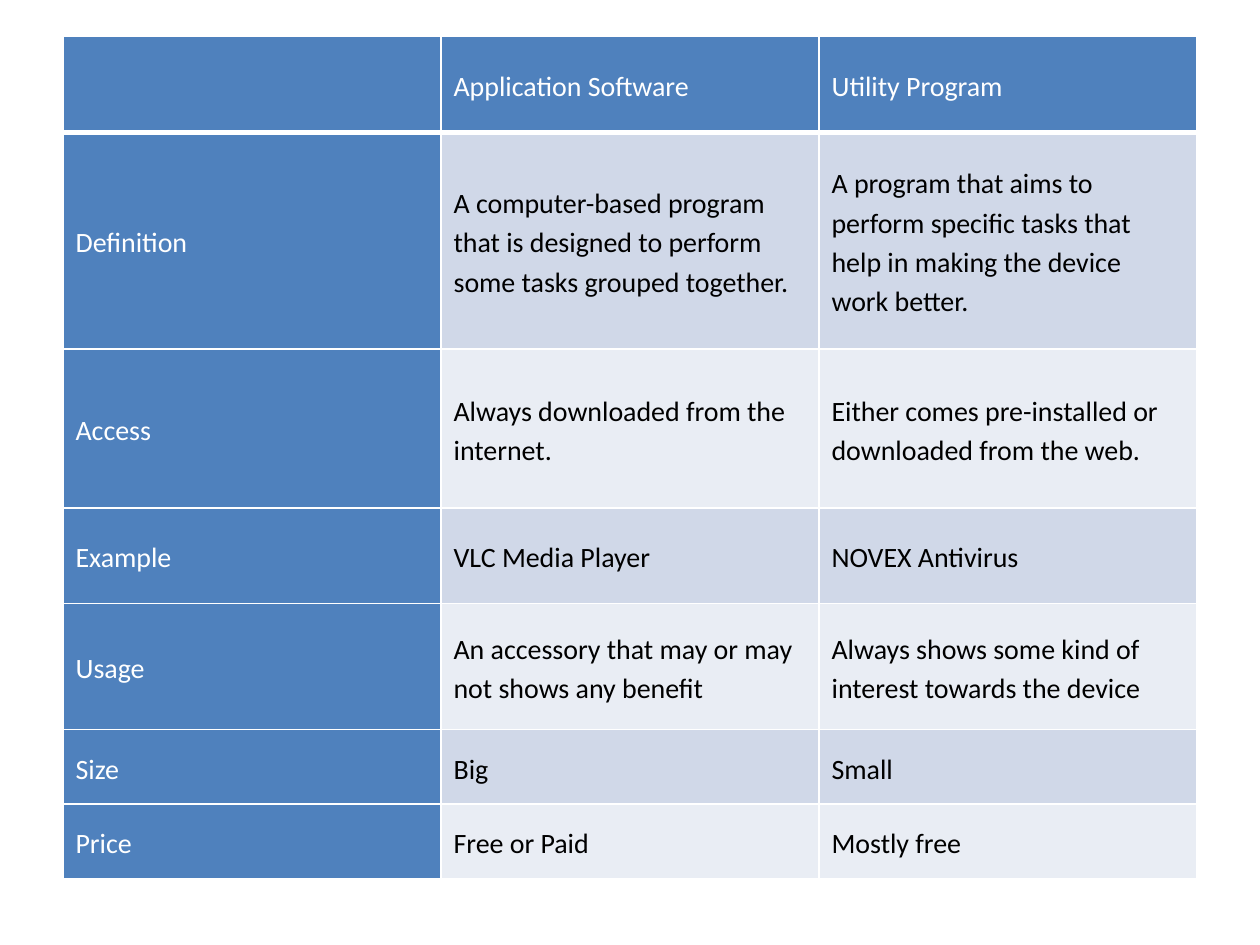
from lxml import etree
from pptx import Presentation
from pptx.dml.color import RGBColor
from pptx.enum.text import MSO_ANCHOR
from pptx.oxml.ns import qn
from pptx.util import Cm, Pt

MIDDLE = MSO_ANCHOR.MIDDLE

ROWS = [
    (1.93, "", "Application Software", "Utility Program"),
    (4.37, "Definition",
     "A computer-based program that is designed to perform some tasks grouped together.",
     "A program that aims to perform specific tasks that help in making the device work better."),
    (3.2, "Access", "Always downloaded from the internet.",
     "Either comes pre-installed or downloaded from the web."),
    (1.93, "Example", "VLC Media Player", "NOVEX Antivirus"),
    (2.54, "Usage", "An accessory that may or may not shows any benefit",
     "Always shows some kind of interest towards the device"),
    (1.5, "Size", "Big", "Small"),
    (1.5, "Price", "Free or Paid", "Mostly free"),
]
COLUMN_WIDTH = 7.62
LEFT, TOP = 1.27, 0.74
WHITE, BLACK = "FFFFFF", "000000"
HEADING_FILL = "4F81BD"
BAND_FILLS = ("E9EDF4", "D0D8E8")


def color(value):
    return RGBColor.from_string(value)


def set_borders(cell, bottom_width):
    properties = cell._tc.get_or_add_tcPr()
    widths = {"lnL": 1, "lnR": 1, "lnT": 1, "lnB": bottom_width}
    for position, (side, width) in enumerate(widths.items()):
        line = etree.Element(qn(f"a:{side}"), w=str(Pt(width)))
        fill = etree.SubElement(line, qn("a:solidFill"))
        etree.SubElement(fill, qn("a:srgbClr"), val=WHITE)
        properties.insert(position, line)


def write_text(cell, text, text_color):
    cell.vertical_anchor = MIDDLE
    paragraph = cell.text_frame.paragraphs[0]
    paragraph.line_spacing = 1.15
    paragraph.space_after = Pt(18)
    run = paragraph.add_run()
    run.text = text
    run.font.name = "Calibri"
    run.font.size = Pt(16)
    run.font.bold = False
    run.font.color.rgb = color(text_color)


def add_comparison(slide):
    column_count = len(ROWS[0]) - 1
    total_height = sum(row[0] for row in ROWS)
    table = slide.shapes.add_table(
        len(ROWS), column_count, Cm(LEFT), Cm(TOP),
        Cm(COLUMN_WIDTH * column_count), Cm(total_height)).table
    table.first_row = False
    table.horz_banding = False
    for column in table.columns:
        column.width = Cm(COLUMN_WIDTH)
    for row_index, (height, *texts) in enumerate(ROWS):
        table.rows[row_index].height = Cm(height)
        for column_index, text in enumerate(texts):
            cell = table.cell(row_index, column_index)
            heading = row_index == 0 or column_index == 0
            cell.fill.solid()
            cell.fill.fore_color.rgb = color(HEADING_FILL if heading else BAND_FILLS[row_index % 2])
            set_borders(cell, 3 if row_index == 0 else 1)
            if text:
                write_text(cell, text, WHITE if heading else BLACK)


def main():
    presentation = Presentation()
    presentation.slide_width = Cm(25.4)
    presentation.slide_height = Cm(19.05)
    slide = presentation.slides.add_slide(presentation.slide_layouts[6])
    add_comparison(slide)
    presentation.save("out.pptx")


if __name__ == "__main__":
    main()
